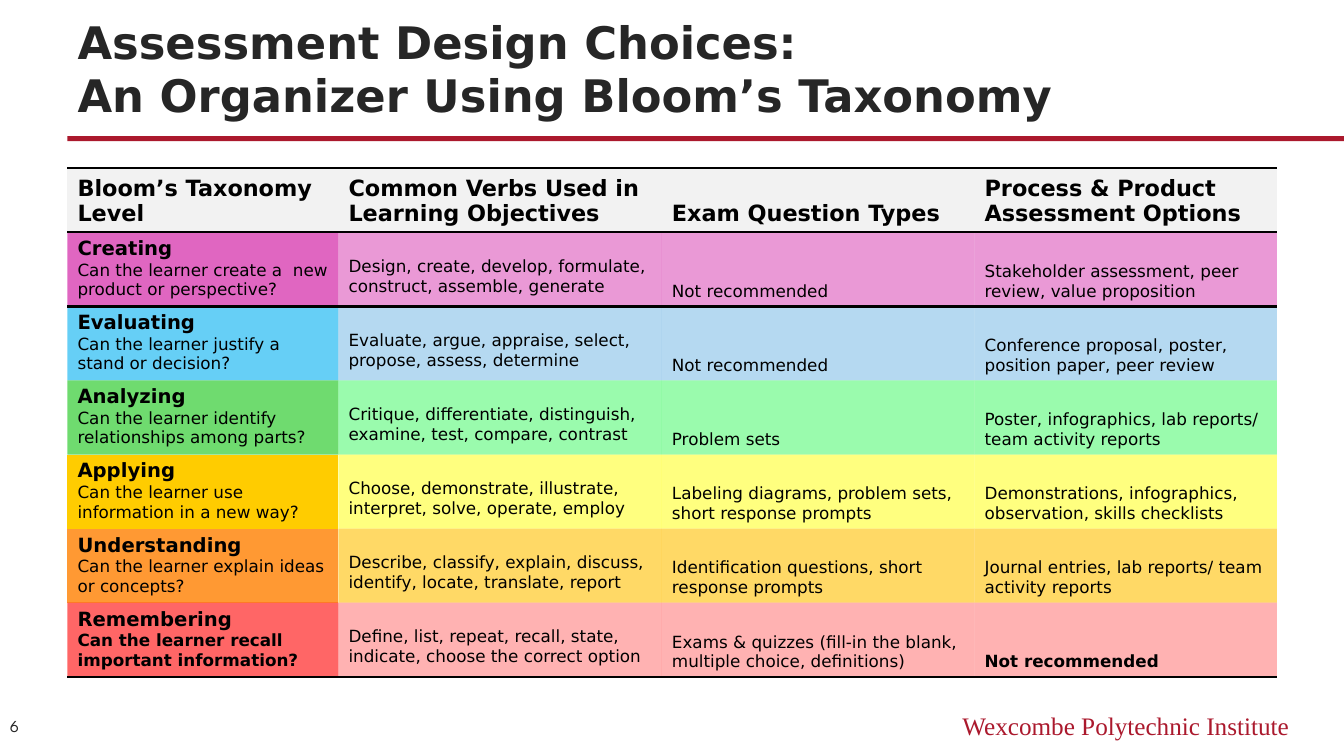
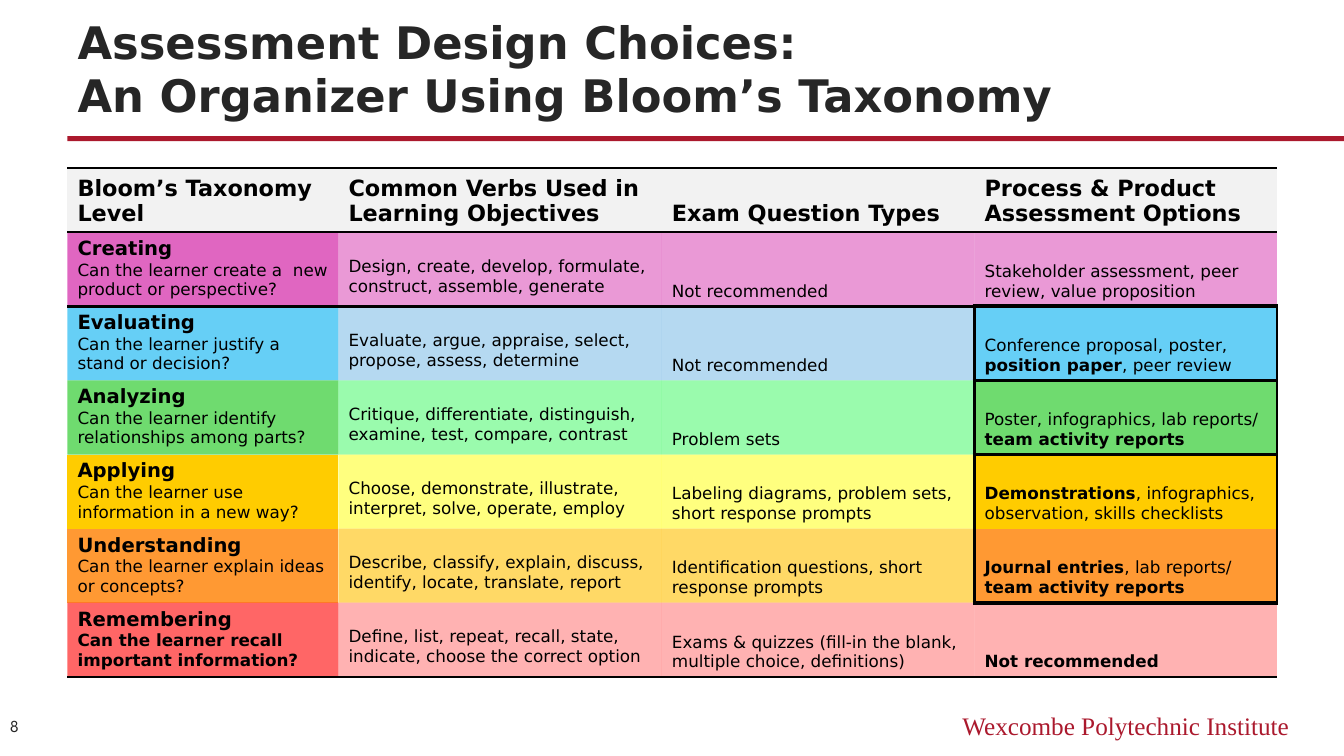
from dataclasses import dataclass

from lxml.etree import SubElement as Sub
from pptx import Presentation
from pptx.dml.color import RGBColor as Rgb
from pptx.enum.shapes import MSO_SHAPE as Form
from pptx.enum.text import MSO_ANCHOR as Anchor, MSO_AUTO_SIZE as Fit, PP_ALIGN as Align
from pptx.oxml.ns import qn
from pptx.util import Cm, Pt


@dataclass(frozen=True)
class Theme:
    # Colours
    red: str = "AB192D"
    ink: str = "262626"
    black: str = "000000"
    head: str = "F2F2F2"
    # Type
    sans: str = "DejaVu Sans"
    serif: str = "Times New Roman"
    digit: str = "League Spartan"
    title: int = 32
    foot: int = 18
    label: int = 16
    level: int = 14
    body: int = 12
    # Rule widths
    thin: int = 1
    rule: int = 2
    thick: int = 3
    # No style, no grid
    plain: str = "{2D5ABB26-0587-4C30-8999-92F81FD0307C}"


TITLE = "Assessment Design Choices:\nAn Organizer Using Bloom’s Taxonomy"
OWNER = "Wexcombe Polytechnic Institute"
HEADS = ["Bloom’s Taxonomy Level",
         "Common Verbs Used in\nLearning Objectives",
         "Exam Question Types",
         "Process & Product Assessment Options"]
WIDTHS = [6.83, 8.15, 7.88, 7.62]

# Level, question, level fill, row fill, verbs, exam types, options;
# a fill is a colour and its opacity, asterisks enclose bold text
LEVELS = [
    ("Creating", "Can the learner create a  new product or perspective?",
     ("CC0099", 60), ("CC0099", 40),
     "Design, create, develop, formulate, construct, assemble, generate",
     "Not recommended",
     "Stakeholder assessment, peer review, value proposition"),
    ("Evaluating", "Can the learner justify a stand or decision?",
     ("00B0F0", 60), ("46A0DC", 40),
     "Evaluate, argue, appraise, select, propose, assess, determine",
     "Not recommended",
     "Conference proposal, poster, position paper, peer review"),
    ("Analyzing", "Can the learner identify relationships among parts?",
     ("33CC33", 70), ("04F632", 40),
     "Critique, differentiate, distinguish, examine, test, compare, contrast",
     "Problem sets",
     "Poster, infographics, lab reports/ team activity reports"),
    ("Applying", "Can the learner use information in a new way?",
     ("FFCC00", 100), ("FFFF00", 50),
     "Choose, demonstrate, illustrate, interpret, solve, operate, employ",
     "Labeling diagrams, problem sets, short response prompts",
     "Demonstrations, infographics, observation, skills checklists"),
    ("Understanding", "Can the learner explain ideas or concepts?",
     ("FF9933", 100), ("FFC000", 60),
     "Describe, classify, explain, discuss, identify, locate, translate, report",
     "Identification questions, short response prompts",
     "Journal entries, lab reports/ team activity reports"),
    ("Remembering", "*Can the learner recall important information?*",
     ("FF0000", 60), ("FF0000", 30),
     "Define, list, repeat, recall, state, indicate, choose the correct option",
     "Exams & quizzes (fill-in the blank, multiple choice, definitions)",
     "*Not recommended*"),
]

# Options stressed on the second slide, by table row
PICKS = {
    2: "Conference proposal, poster, *position paper*, peer review",
    3: "Poster, infographics, lab reports/ *team activity reports*",
    4: "*Demonstrations*, infographics, observation, skills checklists",
    5: "*Journal entries*, lab reports/ *team activity reports*",
}


class Deck:
    def __init__(self, theme):
        self.theme = theme
        self.file = Presentation()
        self.file.slide_width, self.file.slide_height = Cm(33.87), Cm(19.05)
        self.slide = None

    # Text
    def prose(self, frame, lines, color, align=Align.LEFT, **form):
        """Fill a frame with (text, size, bold) lines."""
        for at, (text, size, bold) in enumerate(lines):
            para = frame.add_paragraph() if at else frame.paragraphs[0]
            para.alignment = align
            for turn, part in enumerate(text.split("*")):
                if not part:
                    continue
                run = para.add_run()
                run.text = part
                look = dict(form, size=Pt(size), bold=bold or turn % 2 == 1)
                for key, value in look.items():
                    setattr(run.font, key, value)
                run.font.color.rgb = Rgb.from_string(color)

    def label(self, text, box, size, color, font, align=Align.LEFT, anchor=Anchor.TOP):
        frame = self.slide.shapes.add_textbox(*map(Cm, box)).text_frame
        frame.word_wrap, frame.vertical_anchor = True, anchor
        self.prose(frame, [(text, size, False)], color, align, name=font)

    def title(self, text):
        th, shape = self.theme, self.slide.shapes.title
        for key, value in zip(("left", "top", "width", "height"), (1.7, 0.97, 30.48, 2.23)):
            setattr(shape, key, Cm(value))
        frame = shape.text_frame
        form = dict(auto_size=Fit.NONE, word_wrap=True, vertical_anchor=Anchor.BOTTOM)
        for key, value in form.items():
            setattr(frame, key, value)
        lines = [(line, th.title, True) for line in text.split("\n")]
        self.prose(frame, lines, th.ink, name=th.sans)

    # Shared slide frame
    def band(self):
        bar = self.slide.shapes.add_shape(
            Form.RECTANGLE, Cm(1.7), Cm(3.43), Cm(32.17), Cm(0.13))
        bar.shadow.inherit = False
        bar.fill.solid()
        bar.fill.fore_color.rgb = Rgb.from_string(self.theme.red)
        bar.line.fill.background()

    def page(self, number):
        th = self.theme
        self.slide = self.file.slides.add_slide(self.file.slide_layouts[5])
        self.band()
        self.label(OWNER, (20.32, 17.78, 12.42, 1.02), th.foot, th.red, th.serif, Align.RIGHT)
        self.title(TITLE)
        self.label(str(number), (0, 17.75, 1.7, 1.09), th.body, th.ink, th.digit,
                   anchor=Anchor.MIDDLE)

    # Table
    def cell(self, cell, lines, fill, edges, anchor=Anchor.BOTTOM, top=0.13):
        th = self.theme
        cell.vertical_anchor, cell.margin_top = anchor, Cm(top)
        self.prose(cell.text_frame, lines, th.black, name=th.sans)
        props = cell._tc.get_or_add_tcPr()
        for side in "LRTB":
            if side in edges:
                line = Sub(props, qn("a:ln" + side), w=str(Pt(edges[side])))
                Sub(Sub(line, qn("a:solidFill")), qn("a:srgbClr"), val=th.black)
        color, alpha = fill
        cell.fill.solid()
        cell.fill.fore_color.rgb = Rgb.from_string(color)
        if alpha < 100:
            tone = props.find(qn("a:solidFill")).find(qn("a:srgbClr"))
            Sub(tone, qn("a:alpha"), val=str(alpha * 1000))

    def edges(self, row, col, picks):
        """Rules around the head, under the table and around the picks."""
        th, found = self.theme, {}
        if row == 0:
            found.update(T=th.rule, B=th.rule)
        if row == 1:
            found["T"] = th.rule
        if row == len(LEVELS):
            found["B"] = th.rule
        if not picks:
            return found
        first, last = min(picks), max(picks)
        if col == 2 and row in picks:
            found["R"] = th.thick
        if col == 3:
            if row in picks:
                found.update(L=th.thick, R=th.thin)
            if row in (first, first + 1, last + 1):
                found["T"] = th.thick
            if row in (first - 1, first, last):
                found["B"] = th.thick
        return found

    def table(self, picks):
        th = self.theme
        table = self.slide.shapes.add_table(
            len(LEVELS) + 1, len(HEADS), Cm(1.7), Cm(4.24), Cm(sum(WIDTHS)), Cm(12.49)).table
        table.first_row = table.horz_banding = False
        table._tbl.tblPr.find(qn("a:tableStyleId")).text = th.plain
        for col, width in zip(table.columns, WIDTHS):
            col.width = Cm(width)
        for at, row in enumerate(table.rows):
            row.height = Cm(1.82 if at else 1.57)
        for col, head in enumerate(HEADS):
            lines = [(line, th.label, True) for line in head.split("\n")]
            self.cell(table.cell(0, col), lines, (th.head, 100), self.edges(0, col, picks))
        for row, (level, ask, deep, pale, verbs, exam, option) in enumerate(LEVELS, 1):
            lines = [(level, th.level, True), (ask, th.body, False)]
            self.cell(table.cell(row, 0), lines, deep, self.edges(row, 0, picks), Anchor.TOP)
            texts = (verbs, exam, picks.get(row, option))
            for col, text in enumerate(texts, 1):
                fill = deep if col == 3 and row in picks else pale
                place = dict(anchor=Anchor.TOP, top=0.62) if col == 1 else {}
                self.cell(table.cell(row, col), [(text, th.body, False)], fill,
                          self.edges(row, col, picks), **place)


def main():
    deck = Deck(Theme())
    for number, picks in ((6, {}), (8, PICKS)):
        deck.page(number)
        deck.table(picks)
    deck.file.save("out.pptx")


if __name__ == "__main__":
    main()
